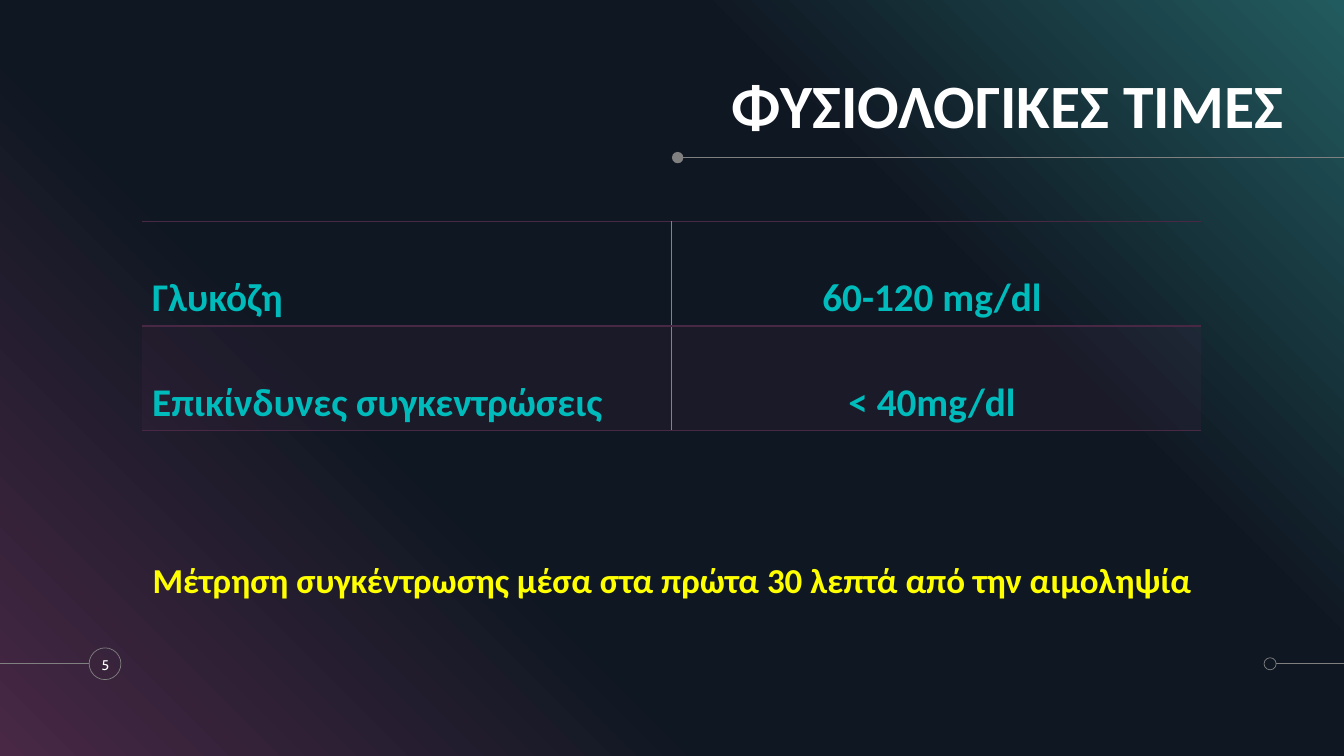
import pptx
import pptx.dml.color
import pptx.enum.shapes
import pptx.enum.text
import pptx.oxml
import pptx.oxml.ns
import pptx.util
from lxml import etree

RGBColor = pptx.dml.color.RGBColor
PLUM = RGBColor(0x48, 0x28, 0x45)
NAVY = RGBColor(0x0F, 0x17, 0x22)
PINE = RGBColor(0x22, 0x5B, 0x5F)
GRAY = RGBColor(0x80, 0x80, 0x80)
TEAL = RGBColor(0x00, 0xBB, 0xBB)
YELLOW = RGBColor(0xFF, 0xFF, 0x00)
WHITE = RGBColor(0xFF, 0xFF, 0xFF)
BLACK = RGBColor(0x00, 0x00, 0x00)

SLIDE_WIDTH = pptx.util.Inches(13.33)
SLIDE_HEIGHT = pptx.util.Inches(7.5)
COLUMN = SLIDE_WIDTH / 100
ROW = SLIDE_HEIGHT / 100
ALIGN = pptx.enum.text.PP_ALIGN
ANCHOR = pptx.enum.text.MSO_ANCHOR
SHAPE = pptx.enum.shapes.MSO_SHAPE
NAMESPACE = pptx.oxml.ns.nsdecls("a")

VALUES = [
    ("Γλυκόζη", "60-120 mg/dl "),
    ("Επικίνδυνες συγκεντρώσεις", "< 40mg/dl "),
]


def grid(left, top, width, height):
    return (round(left * COLUMN), round(top * ROW),
            round(width * COLUMN), round(height * ROW))


def write(frame, text, size, color, font="Calibri", bold=True,
          align=ALIGN.CENTER, spacing=1.0, anchor=None, inset=None):
    frame.word_wrap = True
    if anchor is not None:
        frame.vertical_anchor = anchor
    if inset is not None:
        frame.margin_left = frame.margin_right = inset
        frame.margin_top = frame.margin_bottom = inset
    paragraph = frame.paragraphs[0]
    paragraph.alignment = align
    paragraph.line_spacing = spacing
    run = paragraph.add_run()
    run.text = text
    run.font.name = font
    run.font.size = pptx.util.Pt(size)
    run.font.bold = bold
    run.font.color.rgb = color


def add_backdrop(slide, box):
    slide.background.fill.solid()
    slide.background.fill.fore_color.rgb = BLACK
    backdrop = slide.shapes.add_shape(SHAPE.RECTANGLE, *box)
    backdrop.shadow.inherit = False
    backdrop.line.fill.background()
    backdrop.fill.gradient()
    backdrop.fill.gradient_angle = 45
    stops = backdrop.element.spPr.find(".//" + pptx.oxml.ns.qn("a:gsLst"))
    for stop in list(stops):
        stops.remove(stop)
    for share, color in [(0, PLUM), (34, NAVY), (69, NAVY), (100, PINE)]:
        stops.append(pptx.oxml.parse_xml(
            f'<a:gs {NAMESPACE} pos="{share * 1000}"><a:srgbClr val="{color}"/></a:gs>'))


def add_dotted_rule(slide, box, dot_at_left=True, filled=False):
    left, top, width, diameter = box
    middle = top + diameter // 2
    dot_left = left if dot_at_left else left + width - diameter
    line_left = left + diameter if dot_at_left else left
    rule = slide.shapes.add_connector(
        pptx.enum.shapes.MSO_CONNECTOR.STRAIGHT,
        line_left, middle, line_left + width - diameter, middle)
    etree.SubElement(rule.element.spPr, pptx.oxml.ns.qn("a:effectLst"))
    dot = slide.shapes.add_shape(SHAPE.OVAL, dot_left, top, diameter, diameter)
    dot.shadow.inherit = False
    for line in (rule.line, dot.line):
        line.color.rgb = GRAY
        line.width = pptx.util.Pt(0.5)
    if filled:
        dot.fill.solid()
        dot.fill.fore_color.rgb = GRAY
        dot.line.fill.background()
    else:
        dot.fill.background()


def add_title(slide, box):
    title = slide.shapes.title
    title.left, title.top, title.width, title.height = box
    write(title.text_frame, "ΦΥΣΙΟΛΟΓΙΚΕΣ ΤΙΜΕΣ", 44, WHITE,
          spacing=0.9, anchor=ANCHOR.BOTTOM, inset=0)


def add_page_number(slide, box):
    number = slide.shapes.add_textbox(*box)
    write(number.text_frame, "5", 10, WHITE, font="Cabin", bold=False,
          anchor=ANCHOR.MIDDLE)


def set_borders(cell, colors):
    properties = cell._tc.get_or_add_tcPr()
    for index, side in enumerate(("lnL", "lnR", "lnT", "lnB")):
        color = colors.get(side)
        paint = (f'<a:solidFill><a:srgbClr val="{color}"/></a:solidFill>'
                 if color is not None else "<a:noFill/>")
        properties.insert(index, pptx.oxml.parse_xml(
            f'<a:{side} {NAMESPACE} w="12700">{paint}</a:{side}>'))


def add_values_table(slide, box):
    table = slide.shapes.add_table(len(VALUES), 2, *box).table
    table.first_row = False
    table.horz_banding = False
    for row, texts in enumerate(VALUES):
        for column, text in enumerate(texts):
            cell = table.cell(row, column)
            cell.vertical_anchor = ANCHOR.MIDDLE
            write(cell.text_frame, text, 28, TEAL, spacing=2.0,
                  align=ALIGN.CENTER if column else ALIGN.LEFT)
            if row % 2:
                cell.fill.solid()
                cell.fill.fore_color.rgb = PLUM
                color = cell._tc.tcPr.find(".//" + pptx.oxml.ns.qn("a:srgbClr"))
                etree.SubElement(color, pptx.oxml.ns.qn("a:alpha"), val="20000")
            else:
                cell.fill.background()
            divider = "lnL" if column else "lnR"
            set_borders(cell, {divider: TEAL, "lnT": PLUM, "lnB": PLUM})


def add_note(slide, box):
    note = slide.shapes.add_textbox(*box)
    write(note.text_frame,
          "Μέτρηση συγκέντρωσης μέσα στα πρώτα 30 λεπτά από την αιμοληψία",
          25, YELLOW, spacing=1.5, inset=0)


def main():
    presentation = pptx.Presentation()
    presentation.slide_width = SLIDE_WIDTH
    presentation.slide_height = SLIDE_HEIGHT
    slide = presentation.slides.add_slide(presentation.slide_layouts[5])
    add_backdrop(slide, grid(0, 0, 100, 100))
    add_dotted_rule(slide, grid(50, 20.1, 50, 1.5), filled=True)
    add_dotted_rule(slide, grid(94.05, 87, 5.95, 1.6))
    add_dotted_rule(slide, grid(0, 85.7, 9, 4.2), dot_at_left=False)
    add_title(slide, grid(53.63, 10.53, 42.68, 8.27))
    slide.shapes._spTree.append(slide.shapes.title.element)
    add_page_number(slide, grid(6.38, 85.73, 2.93, 4.4))
    add_values_table(slide, grid(10.57, 29.33, 78.8, 24.8))
    add_note(slide, grid(5.63, 71.07, 88.73, 14.8))
    presentation.save("out.pptx")


if __name__ == "__main__":
    main()
